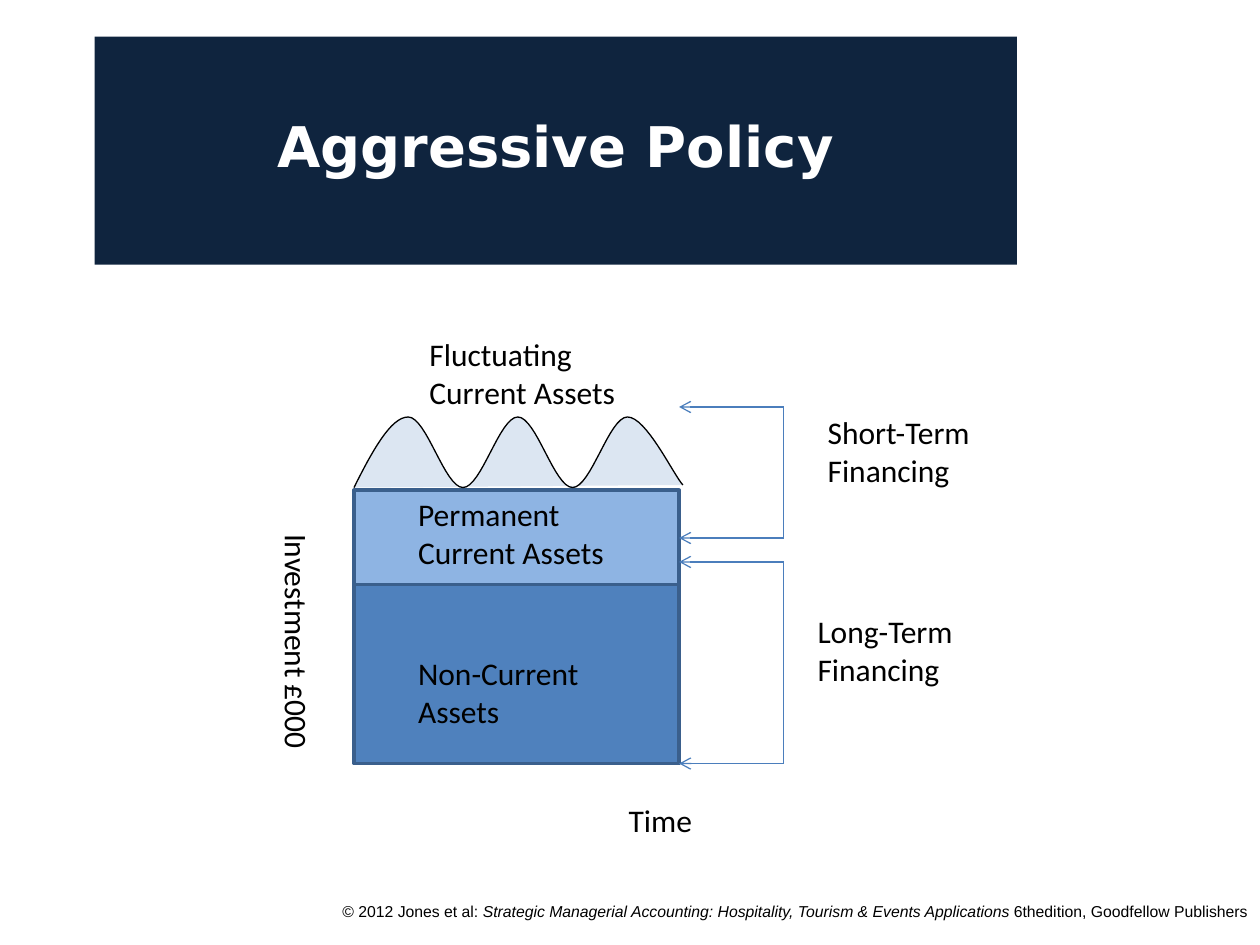
from lxml.etree import SubElement
from pptx import Presentation
from pptx.dml.color import RGBColor
from pptx.enum.shapes import MSO_CONNECTOR, MSO_SHAPE
from pptx.enum.text import MSO_ANCHOR, PP_ALIGN
from pptx.oxml.ns import qn
from pptx.util import Inches, Pt

BLACK = "000000"
BLUE_LINE = "4B7EBC"
BOX_LINE = "3A5F8C"
STEPS_PER_CURVE = 16


def color(value):
    return RGBColor.from_string(value)


def inches(*lengths):
    return [Inches(length) for length in lengths]


def paint(shape, fill, line, width):
    shape.shadow.inherit = False
    shape.fill.solid()
    shape.fill.fore_color.rgb = color(fill)
    shape.line.color.rgb = color(line)
    shape.line.width = Pt(width)


def set_font(paragraph, name, size, value=BLACK, bold=False):
    paragraph.font.name = name
    paragraph.font.size = Pt(size)
    paragraph.font.color.rgb = color(value)
    paragraph.font.bold = bold


def add_title(slide, text, box):
    title = slide.shapes.title
    title.left, title.top, title.width, title.height = inches(*box)
    title.fill.solid()
    title.fill.fore_color.rgb = color("0F243E")
    frame = title.text_frame
    frame.vertical_anchor = MSO_ANCHOR.MIDDLE
    frame.margin_bottom = Inches(0.13)
    frame.text = text
    paragraph = frame.paragraphs[0]
    paragraph.alignment = PP_ALIGN.CENTER
    set_font(paragraph, "DejaVu Sans", 32, "FFFFFF", bold=True)


def add_label(slide, text, box, vertical=False):
    frame = slide.shapes.add_textbox(*inches(*box)).text_frame
    frame.word_wrap = True
    if vertical:
        frame._txBody.bodyPr.set("vert", "vert")
    frame.text = text
    set_font(frame.paragraphs[0], "Calibri", 18)


def add_asset_block(slide, box, fill):
    block = slide.shapes.add_shape(MSO_SHAPE.RECTANGLE, *inches(*box))
    paint(block, fill, BOX_LINE, 2)


def curve_points(start, control_1, control_2, end):
    """Points along a cubic Bezier curve, without its start."""
    for step in range(1, STEPS_PER_CURVE + 1):
        t = step / STEPS_PER_CURVE
        weights = ((1 - t) ** 3, 3 * t * (1 - t) ** 2, 3 * t ** 2 * (1 - t), t ** 3)
        corners = (start, control_1, control_2, end)
        yield tuple(Inches(sum(weight * corner[axis] for weight, corner in zip(weights, corners)))
                    for axis in (0, 1))


def add_wave(slide, box):
    """Three peaks: soft outer flanks, and S-curves between peaks and troughs."""
    left, top, width, height = box
    bottom, right = top + height, left + width
    first_peak, half_wave = left + 0.43, 0.435
    start = (left, bottom)
    points = list(curve_points(start, (left + 0.14, bottom - 0.28),
                               (first_peak - 0.14, top), (first_peak, top)))
    for index in range(4):
        x = first_peak + index * half_wave
        y, next_y = (top, bottom) if index % 2 == 0 else (bottom, top)
        points += curve_points((x, y), (x + half_wave / 3, y),
                               (x + half_wave * 2 / 3, next_y), (x + half_wave, next_y))
    last_peak = first_peak + 4 * half_wave
    points += curve_points((last_peak, top), (last_peak + 0.15, top),
                           (right - 0.08, bottom - 0.11), (right, bottom - 0.02))
    builder = slide.shapes.build_freeform(*inches(*start))
    builder.add_line_segments(points, close=False)
    paint(builder.convert_to_shape(), "DCE6F2", BLACK, 0.75)


def add_line(slide, start, end, arrow=False):
    line = slide.shapes.add_connector(MSO_CONNECTOR.STRAIGHT, *inches(*start, *end))
    line.line.color.rgb = color(BLUE_LINE)
    line.line.width = Pt(0.75)
    if arrow:
        SubElement(line.line._get_or_add_ln(), qn("a:tailEnd"), type="arrow")
    SubElement(line._element.spPr, qn("a:effectLst"))


def add_bracket(slide, box):
    """A vertical line at the right with an arrow to the left at each end."""
    left, top, width, height = box
    right, bottom = left + width, top + height
    for y in (top, bottom):
        add_line(slide, (right, y), (left, y), arrow=True)
    add_line(slide, (right, top), (right, bottom))


def add_diagram(slide, box):
    """Stacked assets with the financing of each part, placed from the top left of the box."""
    left, top = box[:2]

    def place(x, y, width, height):
        return left + x, top + y, width, height

    add_asset_block(slide, place(0.76, 2.03, 2.58, 1.42), "4F81BD")
    add_asset_block(slide, place(0.76, 1.28, 2.58, 0.75), "8EB4E3")
    add_wave(slide, place(0.76, 0.7, 2.61, 0.56))
    for bracket in ((3.34, 0.62, 0.83, 1.04), (3.34, 1.85, 0.83, 1.6)):
        add_bracket(slide, place(*bracket))
    labels = (
        ("Fluctuating Current Assets", (1.26, 0, 1.92, 0.71)),
        ("Permanent Current Assets", (1.17, 1.27, 1.83, 0.71)),
        ("Non-Current Assets", (1.17, 2.53, 1.83, 0.71)),
        ("Short-Term Financing", (4.42, 0.62, 1.83, 0.71)),
        ("Long-Term Financing", (4.34, 2.2, 2, 0.71)),
        ("Time", (2.84, 3.7, 1.08, 0.4)),
    )
    for text, label_box in labels:
        add_label(slide, text, place(*label_box))
    add_label(slide, "Investment £000", place(0, 1.53, 0.51, 1.92), vertical=True)


def add_copyright(slide, box):
    frame = slide.shapes.add_textbox(*inches(*box)).text_frame
    frame.word_wrap = True
    paragraph = frame.paragraphs[0]
    paragraph.alignment = PP_ALIGN.RIGHT
    set_font(paragraph, "Arial", 9)
    for text, italic in (
        ("© 2012 Jones et al: ", False),
        ("Strategic Managerial Accounting: Hospitality, Tourism & Events Applications ", True),
        ("6thedition, Goodfellow Publishers", False),
    ):
        run = paragraph.add_run()
        run.text = text
        run.font.italic = italic


def main():
    presentation = Presentation()
    presentation.slide_width, presentation.slide_height = inches(10, 7.5)
    slide = presentation.slides.add_slide(presentation.slide_layouts[5])
    add_title(slide, "Aggressive Policy", (0.75, 0.29, 7.32, 1.81))
    add_diagram(slide, (2.05, 2.61, 6.34, 4.1))
    add_copyright(slide, (2.23, 7.11, 7.77, 0.39))
    presentation.save("out.pptx")


if __name__ == "__main__":
    main()
